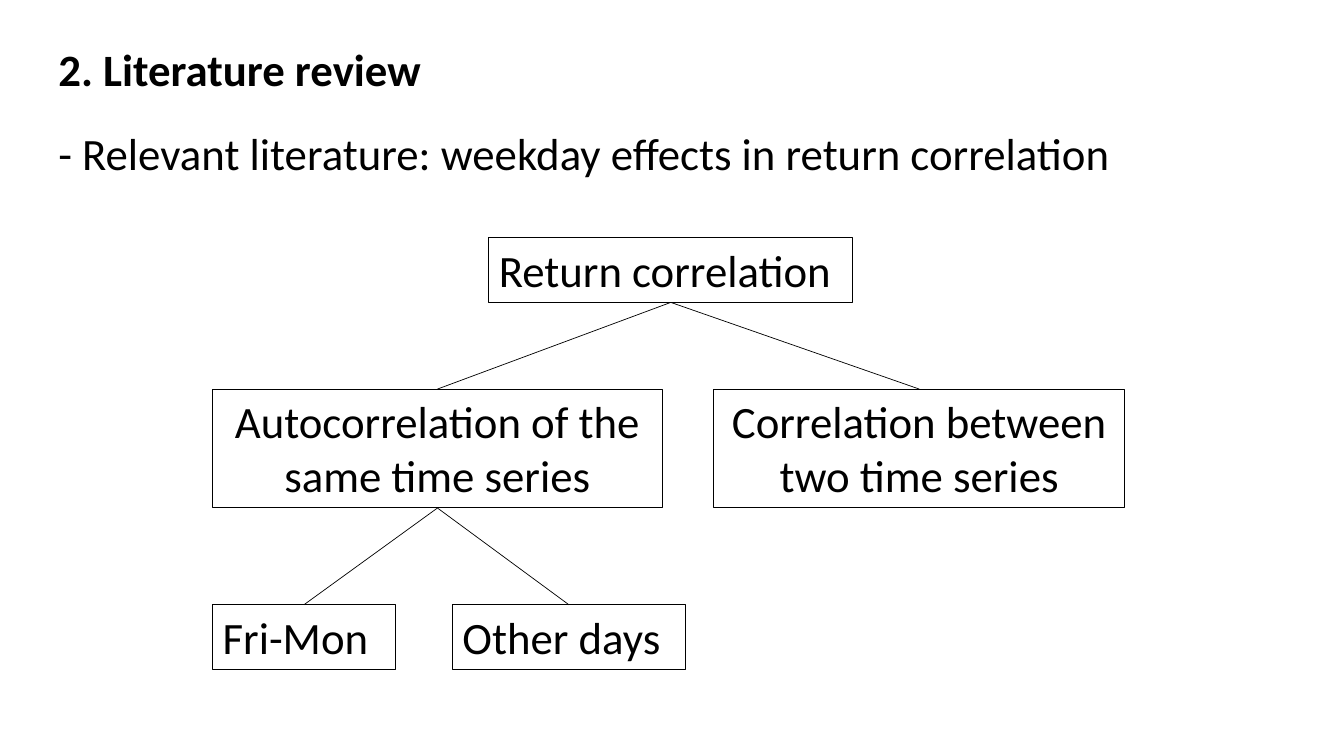
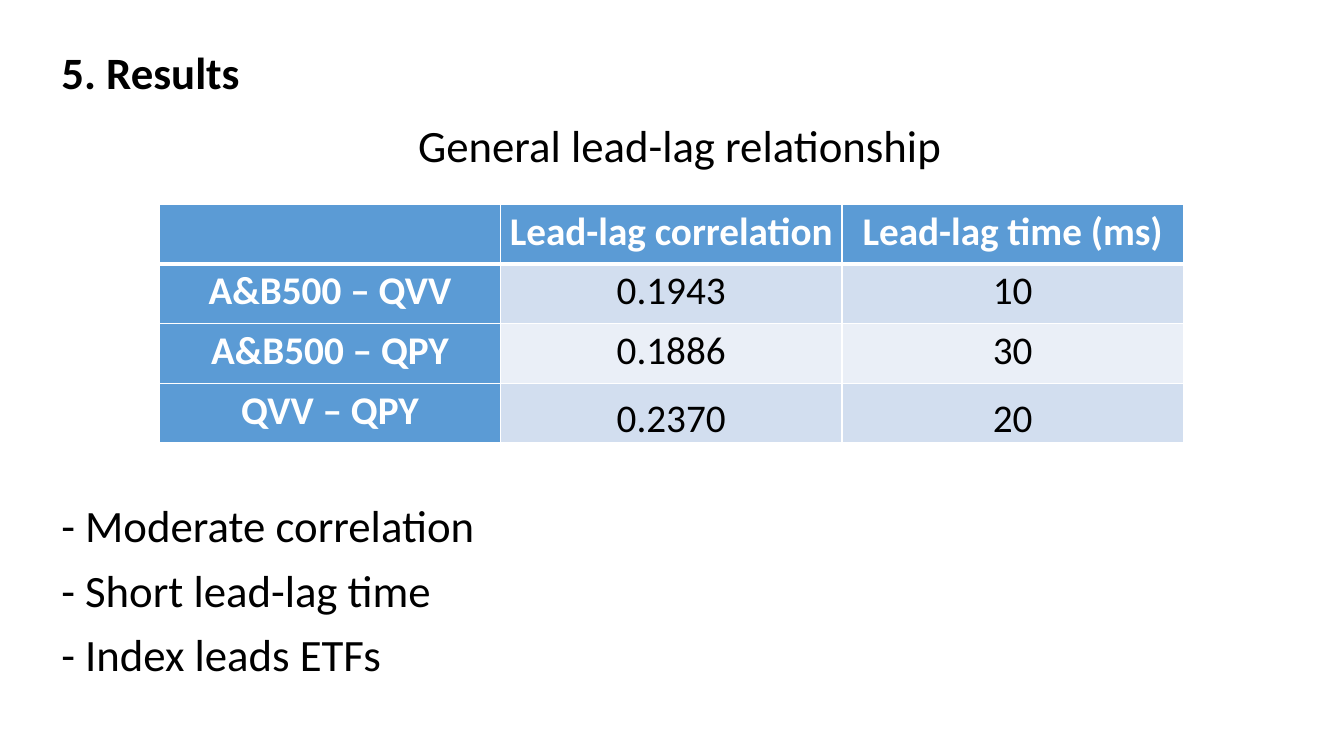
import pptx
import pptx.dml.color
import pptx.enum.shapes
import pptx.enum.text
import pptx.oxml
import pptx.oxml.ns
import pptx.util
from lxml import etree

COLORS = {"ink": "000000", "paper": "FFFFFF", "head": "5B9BD5",
          "band": "D2DEEF", "light": "EAEFF7"}
FONT = "Calibri"
COLS, ROWS = 80, 45
TOP, BOTTOM = 0, 2
ALIGN = pptx.enum.text.PP_ALIGN
ANCHOR = pptx.enum.text.MSO_ANCHOR


def rgb(name):
    return pptx.dml.color.RGBColor.from_string(COLORS[name])


class Deck:
    """Shared style and the current slide; lengths are grid columns and rows."""
    line_height = 3.84
    text_size = 32
    table_size = 28

    def __init__(self):
        self.prs = pptx.Presentation()
        self.prs.slide_width = pptx.util.Inches(13.333)
        self.prs.slide_height = pptx.util.Inches(7.5)
        self.s = None

    def x(self, cols):
        return round(self.prs.slide_width * cols / COLS)

    def y(self, rows):
        return round(self.prs.slide_height * rows / ROWS)

    def area(self, left, top, width, height):
        return self.x(left), self.y(top), self.x(width), self.y(height)

    def set_text(self, tf, text, size=text_size, color="ink", bold=False, align=ALIGN.LEFT):
        tf.text = text
        tf.word_wrap = True
        p = tf.paragraphs[0]
        p.alignment = align
        for r in p.runs:
            r.font.name = FONT
            r.font.size = pptx.util.Pt(size)
            r.font.bold = bold
            r.font.color.rgb = rgb(color)
        return p

    def slide(self, title, left, top, width):
        self.s = self.prs.slides.add_slide(self.prs.slide_layouts[5])
        sp = self.s.shapes.title
        sp.left, sp.top, sp.width, sp.height = self.area(left, top, width, self.line_height)
        tf = sp.text_frame
        self.set_text(tf, title, bold=True)
        tf.vertical_anchor = ANCHOR.TOP
        tf.auto_size = pptx.enum.text.MSO_AUTO_SIZE.NONE

    def text(self, text, left, top, width):
        sp = self.s.shapes.add_textbox(*self.area(left, top, width, self.line_height))
        self.set_text(sp.text_frame, text)

    def box(self, text, left, top, width, height=line_height, align=ALIGN.LEFT):
        sp = self.s.shapes.add_shape(pptx.enum.shapes.MSO_SHAPE.RECTANGLE,
                                     *self.area(left, top, width, height))
        sp.shadow.inherit = False
        sp.fill.background()
        sp.line.color.rgb = rgb("ink")
        sp.line.width = pptx.util.Pt(0.75)
        self.set_text(sp.text_frame, text, align=align)
        sp.text_frame.vertical_anchor = ANCHOR.TOP
        return sp

    def branch(self, parent, *children):
        """Join the bottom of the parent box to the top of each child."""
        for child in children:
            line = self.s.shapes.add_connector(
                pptx.enum.shapes.MSO_CONNECTOR.STRAIGHT, 0, 0, 0, 0)
            line.begin_connect(parent, BOTTOM)
            line.end_connect(child, TOP)
            line.line.color.rgb = rgb("ink")
            line.line.width = pptx.util.Pt(0.5)
            etree.SubElement(line._element.spPr, pptx.oxml.ns.qn("a:effectLst"))

    def borders(self, cell, **widths):
        """Draw borders given as points per side: L, R, T, B."""
        tcPr = cell._tc.get_or_add_tcPr()
        for i, side in enumerate("LRTB"):
            tcPr.insert(i, pptx.oxml.parse_xml(
                f'<a:ln{side} {pptx.oxml.ns.nsdecls("a")} w="{pptx.util.Pt(widths.get(side, 1))}">'
                f'<a:solidFill><a:srgbClr val="{COLORS["paper"]}"/></a:solidFill></a:ln{side}>'))

    def table(self, rows, left, top, col_width, row_height):
        """Table with a coloured first row and column and banded values."""
        n, m = len(rows), len(rows[0])
        table = self.s.shapes.add_table(
            n, m, *self.area(left, top, m * col_width, n * row_height)).table
        for i, row in enumerate(rows):
            for j, text in enumerate(row):
                cell = table.cell(i, j)
                head = i == 0 or j == 0
                cell.margin_left = cell.margin_right = pptx.util.Inches(0.07)
                cell.margin_top = cell.margin_bottom = 0
                p = self.set_text(cell.text_frame, text, self.table_size,
                                  "paper" if head else "ink", head, ALIGN.CENTER)
                p.line_spacing = 1.07
                last_value = i == n - 1 and not head
                cell.vertical_anchor = ANCHOR.BOTTOM if last_value else ANCHOR.TOP
                cell.fill.solid()
                cell.fill.fore_color.rgb = rgb(
                    "head" if head else "band" if i % 2 else "light")
                self.borders(cell, T=3 if i == 1 else 1, B=3 if i == 0 else 1)


def literature_review(deck):
    deck.slide("2. Literature review", 2.88, 2.16, 24)
    deck.text("- Relevant literature: weekday effects in return correlation", 2.88, 7.2, 64.08)
    root = deck.box("Return correlation", 29.1, 14.16, 21.66)
    auto = deck.box("Autocorrelation of the same time series",
                    12.66, 23.16, 26.76, 7.08, ALIGN.CENTER)
    cross = deck.box("Correlation between two time series",
                     42.48, 23.16, 24.48, 7.08, ALIGN.CENTER)
    weekend = deck.box("Fri-Mon", 12.66, 36, 10.86)
    other = deck.box("Other days", 26.94, 36, 13.86)
    deck.branch(root, auto, cross)
    deck.branch(auto, weekend, other)


def results(deck):
    deck.slide("5. Results", 3.06, 2.34, 16)
    deck.table([
        ["", "Lead-lag correlation", "Lead-lag time (ms)"],
        ["A&B500 – QVV", "0.1943", "10"],
        ["A&B500 – QPY", "0.1886", "30"],
        ["QVV – QPY", "0.2370", "20"],
    ], 9.48, 12.18, 20.32, 3.55)
    deck.text("General lead-lag relationship", 24.3, 6.72, 33)
    findings = ["- Moderate correlation", "- Short lead-lag time", "- Index leads ETFs"]
    for i, finding in enumerate(findings):
        deck.text(finding, 3.06, 29.34 + i * deck.line_height, 26)


def main():
    deck = Deck()
    literature_review(deck)
    results(deck)
    deck.prs.save("out.pptx")


if __name__ == "__main__":
    main()
